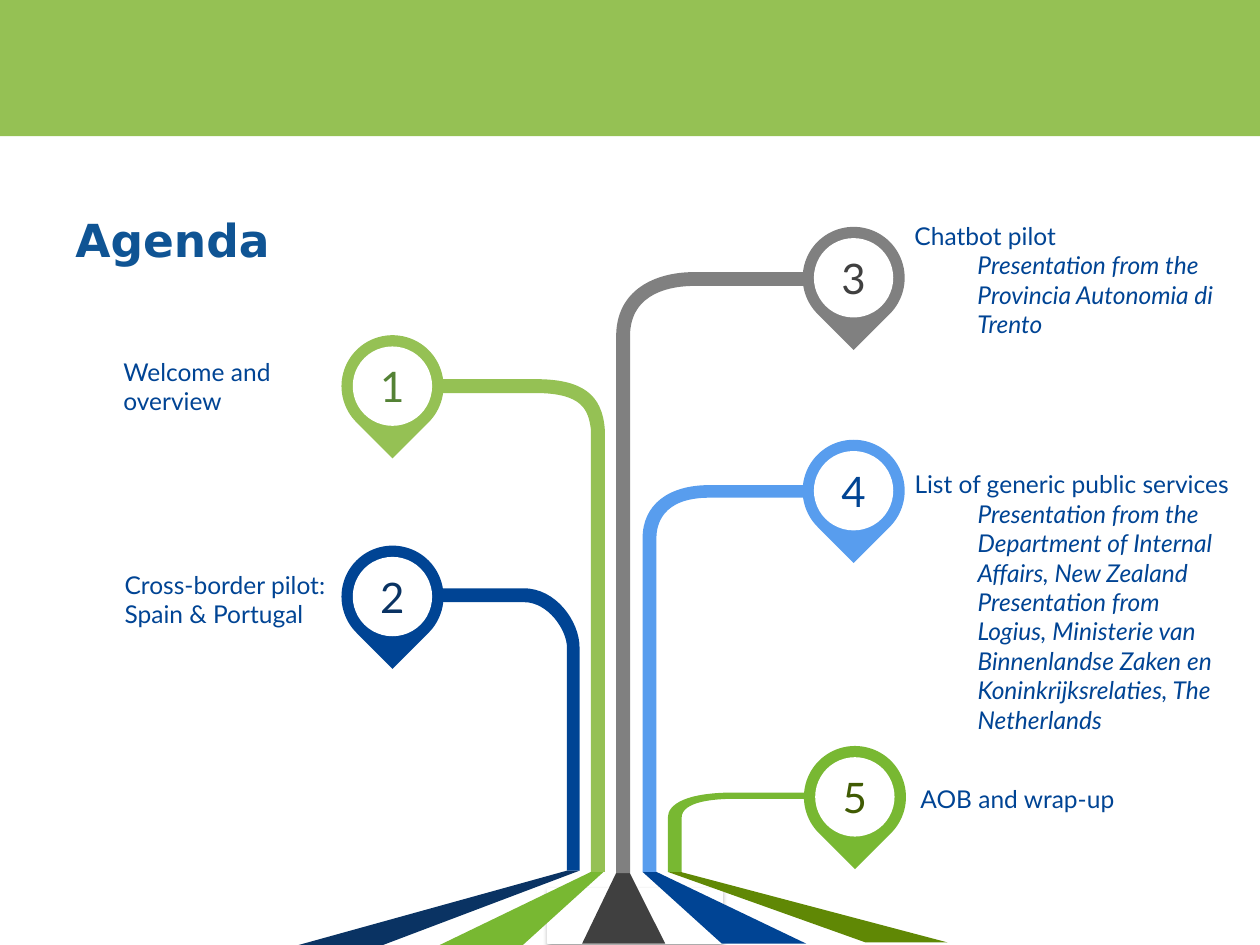
from math import asin, cos, pi, sin, tan

from lxml.etree import SubElement
from pptx import Presentation
from pptx.dml.color import RGBColor
from pptx.enum.shapes import MSO_SHAPE
from pptx.enum.text import MSO_ANCHOR, MSO_AUTO_SIZE, PP_ALIGN
from pptx.oxml.ns import qn
from pptx.util import Pt

PX = 9144  # EMU per px, 100 px to the inch
GREEN, LEAF, NAVY, BLUE, SKY = "95C154", "78B832", "0A3363", "004494", "589DEE"
GREY, DARK, OLIVE, WHITE = "808080", "404040", "608805", "FFFFFF"


def px(*values):
    return [round(v * PX) for v in values]


def rgb(value):
    return RGBColor.from_string(value)


def write(p, text, size=14, font="Lato", color=BLUE, bold=False, italic=False,
          align=PP_ALIGN.LEFT):
    p.alignment = align
    r = p.add_run()
    r.text = text
    f = r.font
    f.size, f.name, f.bold, f.italic = Pt(size), font, bold, italic
    f.color.rgb = rgb(color)


class Deck:
    def __init__(self, width, height):
        self.prs = Presentation()
        self.prs.slide_width, self.prs.slide_height = px(width, height)
        self.s = self.prs.slides.add_slide(self.prs.slide_layouts[6])

    def paint(self, sp, fill):
        sp.shadow.inherit = False
        sp.fill.solid()
        sp.fill.fore_color.rgb = rgb(fill)
        sp.line.fill.background()
        return sp

    def shape(self, kind, box, fill):
        return self.paint(self.s.shapes.add_shape(kind, *px(*box)), fill)

    def outline(self, start, steps, fill):
        """Each step is one point for a line, or three for a cubic curve."""
        builder = self.s.shapes.build_freeform(*px(*start))
        builder.add_line_segments([px(*step[-1]) for step in steps], close=True)
        sp = self.paint(builder.convert_to_shape(), fill)
        lines = list(sp._element.iter(qn("a:lnTo")))
        for line, step in zip(lines, steps):
            if len(step) == 3:
                line.clear()
                line.tag = qn("a:cubicBezTo")
                for point in step:
                    x, y = px(*point)
                    SubElement(line, qn("a:pt"), x=str(x - sp.left), y=str(y - sp.top))

    def text(self, box, lead, subs=(), grow=True, **fmt):
        """A lead line followed by indented italic lines."""
        tf = self.s.shapes.add_textbox(*px(*box)).text_frame
        tf.word_wrap = True
        tf.vertical_anchor = MSO_ANCHOR.MIDDLE
        tf.auto_size = MSO_AUTO_SIZE.SHAPE_TO_FIT_TEXT if grow else MSO_AUTO_SIZE.NONE
        write(tf.paragraphs[0], lead, **fmt)
        for sub in subs:
            p = tf.add_paragraph()
            p.level = 1
            pPr = p._p.get_or_add_pPr()
            pPr.set("marL", str(50 * PX))
            pPr.set("indent", "0")
            write(p, sub, italic=True, **fmt)

    def card(self, box):
        """A white panel with a soft shadow below it."""
        sp = self.shape(MSO_SHAPE.RECTANGLE, box, WHITE)
        sp.line.color.rgb = rgb(WHITE)
        sp.line.width = Pt(0.75)
        effects = sp._element.spPr.find(qn("a:effectLst"))
        shadow = SubElement(effects, qn("a:outerShdw"), blurRad=str(Pt(3.1)),
                            dist=str(Pt(1.8)), dir="5400000", rotWithShape="0")
        color = SubElement(shadow, qn("a:srgbClr"), val="000000")
        SubElement(color, qn("a:alpha"), val="35000")

    def road(self, head, outer, inner, foot, fill):
        """A bent band from a round head down to the foot line."""
        cx, cy, rx, ry = head
        side = 1 if cx > outer[-1][0] else -1

        def rim(angle, pull=0):
            """Point on the head, moved along its tangent by pull."""
            return (cx - side * rx * (cos(angle) - pull * sin(angle)),
                    cy + ry * (sin(angle) + pull * cos(angle)))

        first = asin((inner[0][1] - cy) / ry)
        last = 2 * pi + asin((outer[0][1] - cy) / ry)
        angles = [first, pi / 2, pi, 3 * pi / 2, last]
        steps = [outer[1:], [(outer[-1][0], foot)], [(inner[-1][0], foot)],
                 [inner[-1]], inner[-2::-1], [rim(first)]]
        for a, b in zip(angles, angles[1:]):
            pull = 4 / 3 * tan((b - a) / 4)
            # the tangent of cos turns the sign of the sideways pull
            steps.append([rim(a, pull), rim(b, -pull), rim(b)])
        self.outline(outer[0], steps, fill)

    def pin(self, x, y, number, fill, color):
        self.shape(MSO_SHAPE.TEAR, (x, y, 81, 81), fill).rotation = 135
        sp = self.shape(MSO_SHAPE.OVAL, (x + 9, y + 9, 63, 63), WHITE)
        tf = sp.text_frame
        tf.margin_left = tf.margin_right = tf.margin_top = tf.margin_bottom = 0
        tf.vertical_anchor = MSO_ANCHOR.MIDDLE
        write(tf.paragraphs[0], number, size=24, color=color, align=PP_ALIGN.CENTER)


RAYS = [  # top left, top right, top, bottom left, bottom right, bottom, fill
    (530, 540, 692, 687, 752, 748, OLIVE),
    (510, 521, 692, 573, 640, 749, BLUE),
    (489, 500, 693, 462, 528, 749, DARK),
    (469, 479, 692, 349, 415, 750, LEAF),
    (450, 460, 691, 237, 304, 750, NAVY),
]
ROADS = [  # head, outer curve, inner curve, foot, fill
    ((679, 222, 32, 32), [(551, 216), (520, 216), (489, 230), (489, 267)],
     [(551, 227), (535, 227), (500, 231), (500, 267)], 693, GREY),
    ((679, 389, 32, 32), [(563, 385), (530, 385), (510, 401), (510, 427)],
     [(563, 395), (525, 395), (521, 417), (521, 427)], 692, SKY),
    ((679, 631, 32, 14), [(583, 629), (545, 629), (530, 638), (530, 649)],
     [(583, 634), (567, 634), (541, 636), (541, 649)], 692, LEAF),
    ((310, 308, 32, 32), [(425, 301), (462, 301), (478, 313), (480, 341)],
     [(425, 312), (463, 312), (467, 326), (469, 341)], 692, GREEN),
    ((312, 473, 32, 32), [(416, 467), (441, 467), (460, 493), (460, 514)],
     [(416, 478), (435, 478), (450, 500), (450, 514)], 691, BLUE),
]
PINS = [  # left, top, number, fill, number colour
    (271, 266, "1", GREEN, "548235"),
    (271, 433, "2", BLUE, NAVY),
    (638, 592, "5", LEAF, "405B03"),
    (637, 349, "4", SKY, BLUE),
    (637, 180, "3", GREY, DARK),
]


def main():
    deck = Deck(1000, 750)
    deck.shape(MSO_SHAPE.RECTANGLE, (0, 0, 1000, 108), GREEN)
    deck.card((435, 705, 138, 44))
    deck.text((50, 139, 900, 102), "Agenda", grow=False, size=26,
              font="DejaVu Sans", color="0F5494", bold=True)
    deck.text((88, 278, 185, 57), "Welcome and overview")
    deck.text((89, 447, 185, 57), "Cross-border pilot: Spain & Portugal")
    deck.text((716, 343, 272, 269), "List of generic public services", [
        "Presentation from the Department of Internal Affairs, New Zealand",
        "Presentation from Logius, Ministerie van Binnenlandse Zaken en "
        "Koninkrijksrelaties, The Netherlands"])
    deck.text((715, 617, 185, 34), "AOB and wrap-up", align=PP_ALIGN.CENTER)
    for left, right, top, low_left, low_right, low, fill in RAYS:
        deck.outline((left, top), [[(right, top)], [(low_right, low)],
                                   [(low_left, low)]], fill)
    for road in ROADS:
        deck.road(*road)
    for pin in PINS:
        deck.pin(*pin)
    deck.text((716, 170, 283, 104), "Chatbot pilot",
              ["Presentation from the Provincia Autonomia di Trento"])
    deck.prs.save("out.pptx")


if __name__ == "__main__":
    main()
